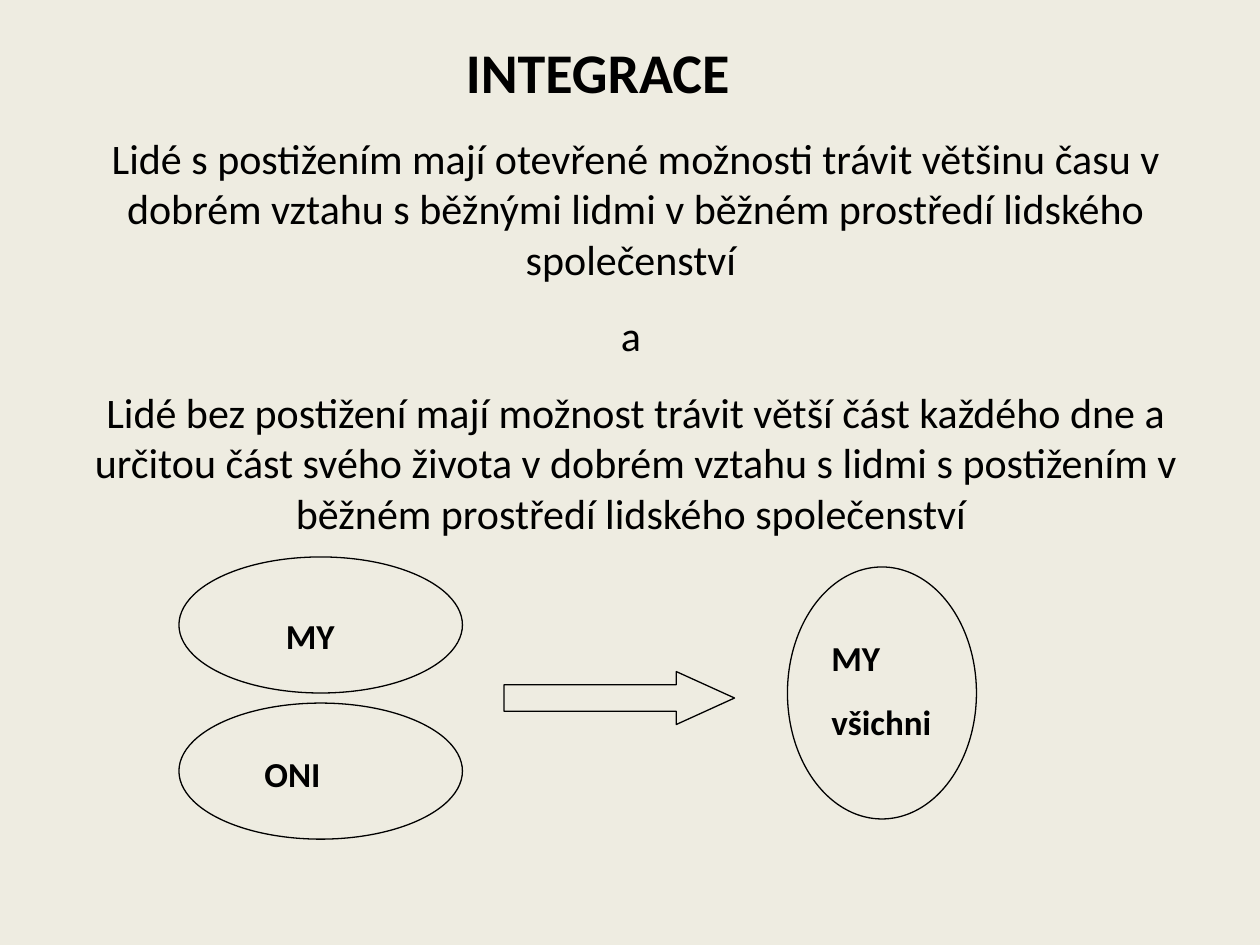
from pptx import Presentation
from pptx.dml.color import RGBColor
from pptx.enum.shapes import MSO_SHAPE
from pptx.enum.text import PP_ALIGN
from pptx.util import Inches, Pt

OVAL = MSO_SHAPE.OVAL
ARROW = MSO_SHAPE.RIGHT_ARROW
LEFT = PP_ALIGN.LEFT
CENTER = PP_ALIGN.CENTER
INK = "000000"
PAPER = "EEECE1"
FONT = "Calibri"

BODY = [
    "Lidé s postižením mají otevřené možnosti trávit většinu času v dobrém "
    "vztahu s běžnými lidmi v běžném prostředí lidského společenství ",
    "a ",
    "Lidé bez postižení mají možnost trávit větší část každého dne a určitou "
    "část svého života v dobrém vztahu s lidmi s postižením v běžném "
    "prostředí lidského společenství ",
]
LABELS = [
    (["MY"], (2.17, 4.83, 2.17, 0.44)),
    (["ONI"], (2, 5.92, 2.92, 0.44)),
    (["MY", "všichni"], (6.5, 5, 1.57, 0.96)),
]
OVALS = [
    (1.42, 4.42, 2.25, 1.08),
    (1.42, 5.58, 2.25, 1.08),
    (6.25, 4.5, 1.5, 2),
]


def paint(code):
    return RGBColor.from_string(code)


def place(box):
    return [Inches(n) for n in box]


def add_text(slide, lines, box, size, gap, bold=True, align=LEFT):
    frame = slide.shapes.add_textbox(*place(box)).text_frame
    frame.word_wrap = True
    frame.text = "\n".join(lines)
    for para in frame.paragraphs:
        para.alignment = align
        para.space_before = Pt(gap)
        for run in para.runs:
            run.font.name = FONT
            run.font.size = Pt(size)
            run.font.bold = bold
            run.font.color.rgb = paint(INK)


def add_outline(slide, kind, box):
    shape = slide.shapes.add_shape(kind, *place(box))
    shape.shadow.inherit = False
    shape.fill.background()
    shape.line.color.rgb = paint(INK)
    shape.line.width = Pt(0.75)
    return shape


def main():
    deck = Presentation()
    deck.slide_width, deck.slide_height = Inches(10), Inches(7.5)
    slide = deck.slides.add_slide(deck.slide_layouts[6])
    fill = slide.background.fill
    fill.solid()
    fill.fore_color.rgb = paint(PAPER)

    add_text(slide, ["INTEGRACE"], (1.33, 0.25, 6.83, 0.64), 32, 25,
             align=CENTER)
    add_text(slide, BODY, (0.42, 1, 9.25, 3.32), 24, 15,
             bold=False, align=CENTER)
    for box in OVALS:
        add_outline(slide, OVAL, box)
    arrow = add_outline(slide, ARROW, (4, 5.33, 1.83, 0.42))
    arrow.adjustments[1] = 1.1
    for lines, box in LABELS:
        add_text(slide, lines, box, 20, 12.5)

    deck.save("out.pptx")


if __name__ == "__main__":
    main()
